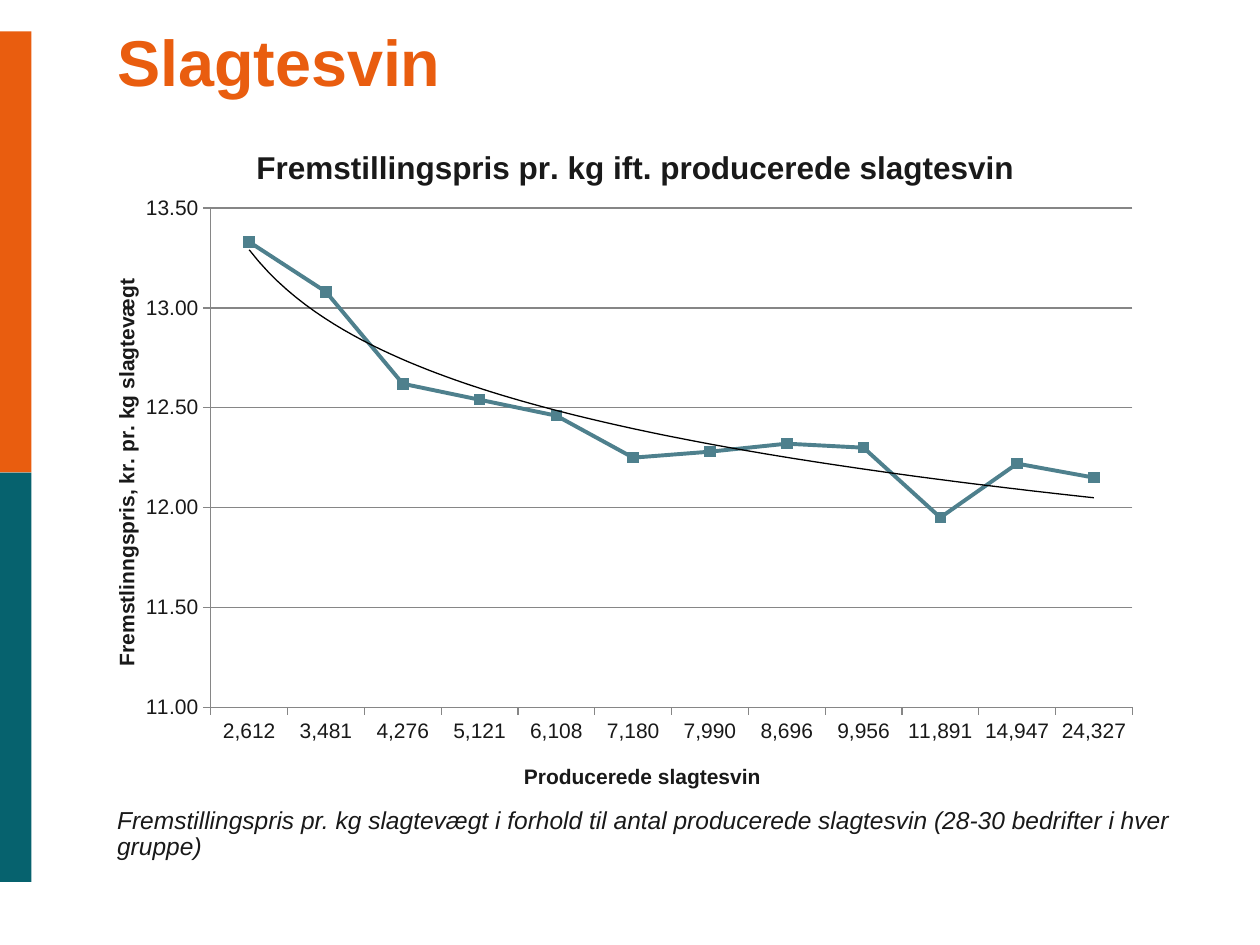
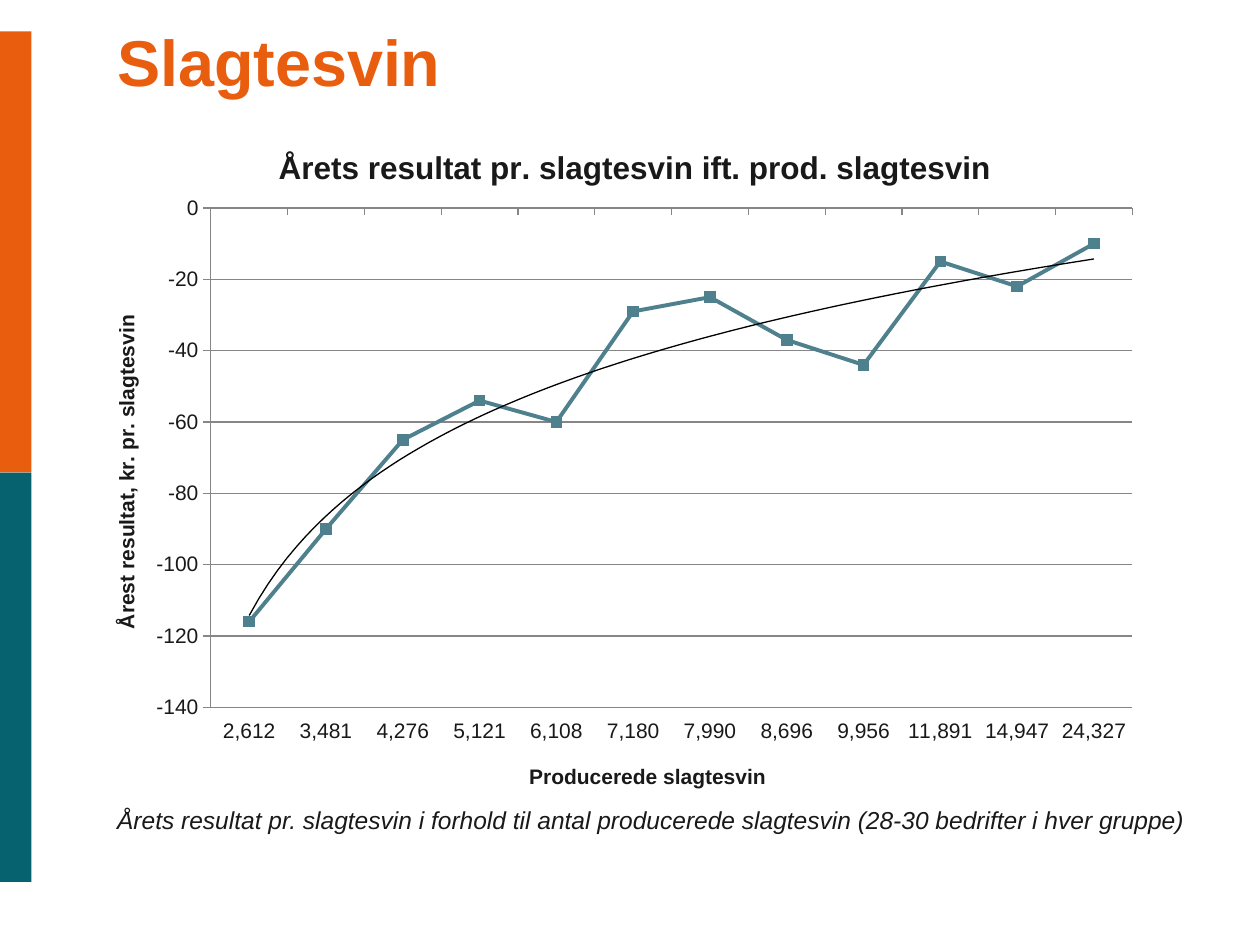
from pptx import Presentation
from pptx.chart.data import CategoryChartData
from pptx.dml.color import RGBColor
from pptx.enum.chart import XL_CHART_TYPE, XL_MARKER_STYLE, XL_TICK_LABEL_POSITION, XL_TICK_MARK
from pptx.enum.shapes import MSO_SHAPE
from pptx.enum.text import MSO_ANCHOR
from pptx.oxml import parse_xml
from pptx.oxml.ns import nsdecls, qn
from pptx.util import Inches, Pt

LINE_MARKERS = XL_CHART_TYPE.LINE_MARKERS
SQUARE = XL_MARKER_STYLE.SQUARE
LOW = XL_TICK_LABEL_POSITION.LOW
TICK_OUT, TICK_NONE = XL_TICK_MARK.OUTSIDE, XL_TICK_MARK.NONE
RECT = MSO_SHAPE.RECTANGLE
TOP, MIDDLE = MSO_ANCHOR.TOP, MSO_ANCHOR.MIDDLE

FONT = "Arial"
ORANGE, TEAL, INK = "E95D0F", "06626E", "191919"
SERIES, GRID, TREND = "4E808D", "868686", "000000"

HEADING = "Slagtesvin"
PIGS_TITLE = "Producerede slagtesvin"
PIGS = [2612, 3481, 4276, 5121, 6108, 7180, 7990, 8696, 9956, 11891, 14947, 24327]

# Title positions are (left, top) in inches on the slide.
CHARTS = [
    dict(
        title="Fremstillingspris pr. kg ift. producerede slagtesvin", title_at=(1.99, 1.12),
        y_title="Fremstlinngspris, kr. pr. kg slagtevægt", y_title_at=(0.87, 2.18),
        x_title_at=(4.13, 6.03),
        values=[13.33, 13.08, 12.62, 12.54, 12.46, 12.25, 12.28, 12.32, 12.30, 11.95, 12.22, 12.15],
        scale=(11, 13.5, 0.5), number_format="#,##0.00",
        caption="Fremstillingspris pr. kg slagtevægt i forhold til antal producerede "
                "slagtesvin (28-30 bedrifter i hver gruppe)",
    ),
    dict(
        title="Årets resultat pr. slagtesvin ift. prod. slagtesvin", title_at=(2.17, 1.12),
        y_title="Årest resultat, kr. pr. slagtesvin", y_title_at=(0.87, 2.47),
        x_title_at=(4.17, 6.03),
        values=[-116, -90, -65, -54, -60, -29, -25, -37, -44, -15, -22, -10],
        scale=(-140, 0, 20), number_format="#,##0",
        caption="Årets resultat pr. slagtesvin i forhold til antal producerede "
                "slagtesvin (28-30 bedrifter i hver gruppe)",
    ),
]

BANDS = [(0.25, 3.5, ORANGE), (3.75, 3.25, TEAL)]  # top, height, colour
BAND_WIDTH = 0.25
HEADING_BOX = (0.93, 0.29, 5.72, 0.5)
CAPTION_BOX = (0.93, 6.41, 8.87, 0.5)
CHART_BOX = (0.83, 0.92, 8.35, 5.46)
PLOT = dict(x=0.101, y=0.134, w=0.876, h=0.726)  # shares of the chart


def rgb(color):
    return RGBColor.from_string(color)


def set_font(font, size, color=INK, bold=False, italic=False):
    font.name, font.size, font.bold, font.italic = FONT, Pt(size), bold, italic
    font.color.rgb = rgb(color)


def set_line(line, color, width):
    line.color.rgb = rgb(color)
    line.width = Pt(width)


def add_text(slide, text, box, spacing, anchor=TOP, **font):
    tf = slide.shapes.add_textbox(*map(Inches, box)).text_frame
    tf.word_wrap = True
    tf.vertical_anchor = anchor
    tf.margin_left = tf.margin_top = tf.margin_right = tf.margin_bottom = 0
    p = tf.paragraphs[0]
    p.line_spacing = spacing
    r = p.add_run()
    r.text = text
    set_font(r.font, **font)


def add_bands(slide):
    for top, height, color in BANDS:
        sp = slide.shapes.add_shape(RECT, 0, Inches(top), Inches(BAND_WIDTH), Inches(height))
        sp.shadow.inherit = False
        sp.fill.solid()
        sp.fill.fore_color.rgb = rgb(color)
        sp.line.fill.background()


def layout_xml(inner=False, **shares):
    target = '<c:layoutTarget val="inner"/>' if inner else ""
    modes = "".join(f'<c:{k}Mode val="edge"/>' for k in "xy")
    sizes = "".join(f'<c:{k} val="{v:.3f}"/>' for k, v in shares.items())
    return parse_xml(f'<c:layout {nsdecls("c")}><c:manualLayout>{target}{modes}{sizes}'
                     '</c:manualLayout></c:layout>')


def replace_layout(parent, layout):
    for old in parent.findall(qn("c:layout")):
        parent.remove(old)
    tx = parent.find(qn("c:tx"))
    if tx is None:
        parent.insert(0, layout)
    else:
        tx.addnext(layout)


def set_title(title, text, at, size, upright=False):
    """Write a chart or axis title and pin it at a slide position."""
    tf = title.text_frame
    tf.text = text
    set_font(tf.paragraphs[0].runs[0].font, size, bold=True)
    if upright:
        body = tf._txBody.find(qn("a:bodyPr"))
        body.set("rot", "-5400000")
        body.set("vert", "horz")
    left, top, width, height = CHART_BOX
    replace_layout(title._element, layout_xml(x=(at[0] - left) / width, y=(at[1] - top) / height))


def add_log_trend(series):
    trend = parse_xml(
        f'<c:trendline {nsdecls("c", "a")}><c:spPr><a:ln w="{Pt(0.75)}"><a:solidFill>'
        f'<a:srgbClr val="{TREND}"/></a:solidFill></a:ln></c:spPr>'
        '<c:trendlineType val="log"/><c:dispRSqr val="0"/><c:dispEq val="0"/></c:trendline>')
    series._element.find(qn("c:cat")).addprevious(trend)


def add_line_chart(slide, info):
    data = CategoryChartData(number_format=info["number_format"])
    data.categories = [f"{n:,}" for n in PIGS]
    data.add_series("Series 1", info["values"])
    chart = slide.shapes.add_chart(LINE_MARKERS, *map(Inches, CHART_BOX), data).chart
    set_font(chart.font, 10)
    chart.has_legend = False
    set_title(chart.chart_title, info["title"], info["title_at"], 18)

    x_axis, y_axis = chart.category_axis, chart.value_axis
    for axis in (x_axis, y_axis):
        axis.major_tick_mark, axis.minor_tick_mark = TICK_OUT, TICK_NONE
        set_font(axis.tick_labels.font, 12)
        set_line(axis.format.line, GRID, 0.75)
    x_axis.tick_label_position = LOW
    y_axis.minimum_scale, y_axis.maximum_scale, y_axis.major_unit = info["scale"]
    y_axis.tick_labels.number_format = info["number_format"]
    y_axis.tick_labels.number_format_is_linked = False
    y_axis.has_major_gridlines = True
    set_line(y_axis.major_gridlines.format.line, GRID, 0.75)
    set_title(x_axis.axis_title, PIGS_TITLE, info["x_title_at"], 12)
    set_title(y_axis.axis_title, info["y_title"], info["y_title_at"], 12, upright=True)

    plot = chart.plots[0]
    plot.vary_by_categories = False
    replace_layout(chart._chartSpace.chart.plotArea, layout_xml(inner=True, **PLOT))
    series = plot.series[0]
    series.smooth = False
    set_line(series.format.line, SERIES, 2.25)
    marker = series.marker
    marker.style, marker.size = SQUARE, 6
    marker.format.fill.solid()
    marker.format.fill.fore_color.rgb = rgb(SERIES)
    set_line(marker.format.line, SERIES, 0.75)
    add_log_trend(series)


def main():
    prs = Presentation()
    prs.slide_width, prs.slide_height = Inches(10), Inches(7.5)
    for info in CHARTS:
        slide = prs.slides.add_slide(prs.slide_layouts[6])
        add_bands(slide)
        add_text(slide, HEADING, HEADING_BOX, 0.81, MIDDLE, size=37, color=ORANGE, bold=True)
        add_line_chart(slide, info)
        add_text(slide, info["caption"], CAPTION_BOX, 0.91, size=14, italic=True)
    prs.save("out.pptx")


if __name__ == "__main__":
    main()
